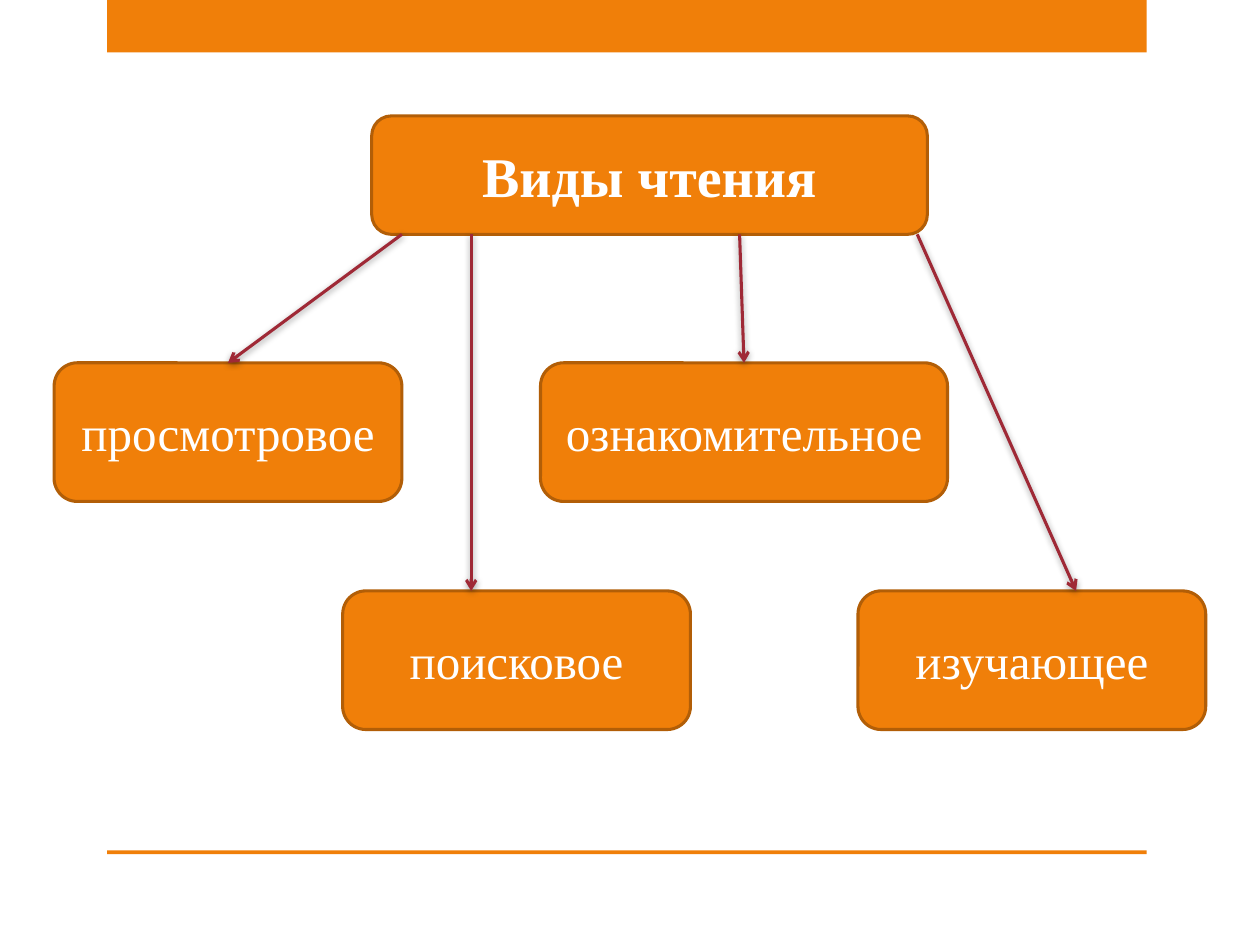
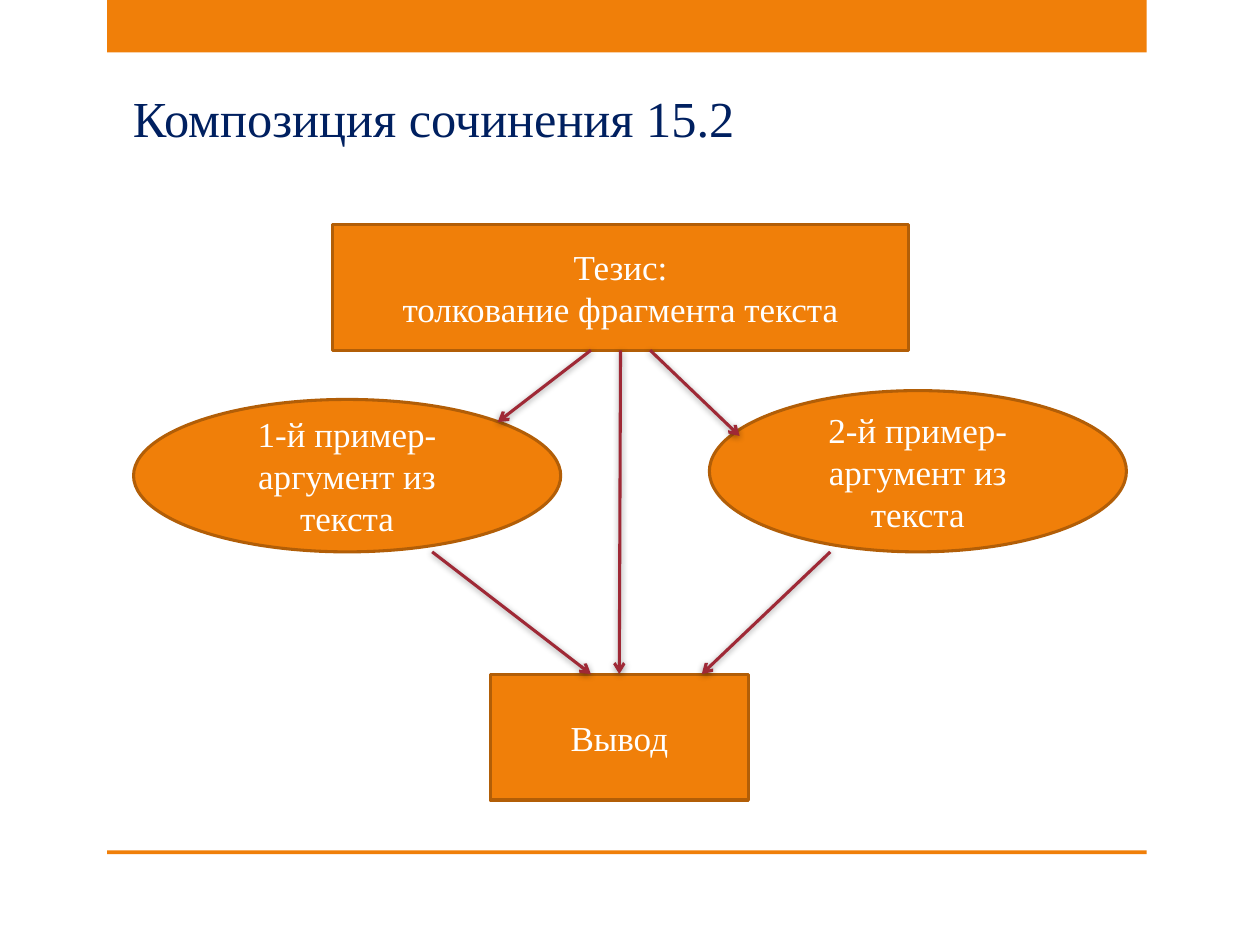
from lxml import etree
from pptx import Presentation
from pptx import util as u
from pptx.dml.color import RGBColor
from pptx.enum import shapes, text
from pptx.oxml.ns import qn

COLUMNS, ROWS = 100, 75
CELL = u.Inches(0.1)
FONT = "Times New Roman"
ORANGE, BROWN, RED, NAVY, WHITE = "F07F09", "B25E07", "9F2936", "002060", "FFFFFF"
KIND = shapes.MSO_SHAPE
TOP, BOTTOM = 0, 2


def cells(*counts):
    return [round(count * CELL) for count in counts]


def paint(target, colour):
    if hasattr(target, "solid"):
        target.solid()
        target = target.fore_color
    target.rgb = RGBColor.from_string(colour)


def write(para, words, size, colour, bold=False):
    span = para.add_run()
    span.text = words
    span.font.name, span.font.size, span.font.bold = FONT, u.Pt(size), bold
    paint(span.font.color, colour)


def add_box(page, kind, place, lines=(), size=20, bold=False):
    box = page.shapes.add_shape(kind, *cells(*place))
    box.shadow.inherit = False
    paint(box.fill, ORANGE)
    paint(box.line.color, BROWN)
    box.line.width = u.Pt(1.75)
    frame = box.text_frame
    frame.word_wrap = True
    frame.vertical_anchor = text.MSO_ANCHOR.MIDDLE
    for number, words in enumerate(lines):
        para = frame.add_paragraph() if number else frame.paragraphs[0]
        para.alignment = text.PP_ALIGN.CENTER
        write(para, words, size, WHITE, bold)
    return box


def add_shadow(properties):
    effects = etree.SubElement(properties, qn("a:effectLst"))
    shadow = etree.SubElement(effects, qn("a:outerShdw"), blurRad=str(u.Pt(4)),
                              dist=str(u.Pt(1)), dir=str(88 * 60000), rotWithShape="0")
    colour = etree.SubElement(shadow, qn("a:srgbClr"), val="000000")
    etree.SubElement(colour, qn("a:alpha"), val="40000")


def end_point(end, side):
    if isinstance(end, tuple):
        return cells(*end)
    return end.left + end.width // 2, end.top + (end.height if side == BOTTOM else 0)


def add_arrow(page, start, finish):
    arrow = page.shapes.add_connector(
        shapes.MSO_CONNECTOR.STRAIGHT, *end_point(start, BOTTOM), *end_point(finish, TOP))
    if not isinstance(start, tuple):
        arrow.begin_connect(start, BOTTOM)
    if not isinstance(finish, tuple):
        arrow.end_connect(finish, TOP)
    paint(arrow.line.color, RED)
    arrow.line.width = u.Pt(1.75)
    properties = arrow._element.spPr
    etree.SubElement(properties.find(qn("a:ln")), qn("a:tailEnd"), type="arrow")
    add_shadow(properties)


def add_master_bands(deck, page):
    tree = deck.slide_master.shapes._spTree
    for top, height in ((0, 4.17), (67.5, 0.3)):
        band = add_box(page, KIND.RECTANGLE, (8.5, top, 82.5, height))
        band.line.fill.background()
        tree.insert(2, band._element)


def set_title(page, words):
    title = page.shapes.title
    title.left, title.top, title.width, title.height = cells(8.3, 5.2, 90, 7.1)
    frame = title.text_frame
    frame.word_wrap = True
    frame.auto_size = text.MSO_AUTO_SIZE.NONE
    frame.vertical_anchor = text.MSO_ANCHOR.BOTTOM
    frame.margin_left, frame.margin_bottom = cells(2.25, 0.6)
    para = frame.paragraphs[0]
    para.alignment = text.PP_ALIGN.LEFT
    write(para, words, 28.8, NAVY)


def fill_reading_types(page):
    kind = KIND.FLOWCHART_ALTERNATE_PROCESS
    upper, lower, width, height = 28.8, 46.9, 27.6, 11
    root_bottom = 18.6
    add_box(page, kind, (29.5, 9.2, 44.1, 9.4), ["Виды чтения"], 32, True)
    skimming, _, overview, _ = [
        add_box(page, kind, (left, top, wide, height), [words], 28)
        for words, left, top, wide in (
            ("просмотровое", 4.3, upper, width),
            ("поисковое", 27.2, lower, width),
            ("ознакомительное", 42.9, upper, 32.3),
            ("изучающее", 68.1, lower, width))]
    for start, finish in ((37.4, (37.4, lower)), (31.9, skimming),
                          (58.7, overview), (72.8, (85.4, lower))):
        add_arrow(page, (start, root_bottom), finish)


def fill_essay_plan(page):
    set_title(page, "Композиция сочинения 15.2")
    thesis_bottom, example_bottom, conclusion_top = 27.8, 43.8, 53.5
    thesis = add_box(page, KIND.RECTANGLE, (26.4, 17.8, 45.7, 10),
                     ["Тезис:", "толкование фрагмента текста"])
    for number, left, top, width in ((1, 10.6, 31.7, 33.9), (2, 56.3, 31, 33.1)):
        add_box(page, KIND.OVAL, (left, top, width, example_bottom - top),
                [f"{number}-й пример-аргумент из текста"])
    conclusion = add_box(page, KIND.RECTANGLE, (38.9, conclusion_top, 20.5, 10), ["Вывод"])
    for start, finish in (
            ((51.6, thesis_bottom), (58.7, 34.6)),
            ((46.9, thesis_bottom), (39.5, 33.5)),
            ((34.3, example_bottom), (46.9, conclusion_top)),
            ((65.9, example_bottom), (55.7, conclusion_top)),
            (thesis, conclusion)):
        add_arrow(page, start, finish)


def main():
    deck = Presentation()
    deck.slide_width, deck.slide_height = cells(COLUMNS, ROWS)
    title_only, blank = deck.slide_layouts[5], deck.slide_layouts[6]
    reading = deck.slides.add_slide(blank)
    add_master_bands(deck, reading)
    fill_reading_types(reading)
    fill_essay_plan(deck.slides.add_slide(title_only))
    deck.save("out.pptx")


if __name__ == "__main__":
    main()
